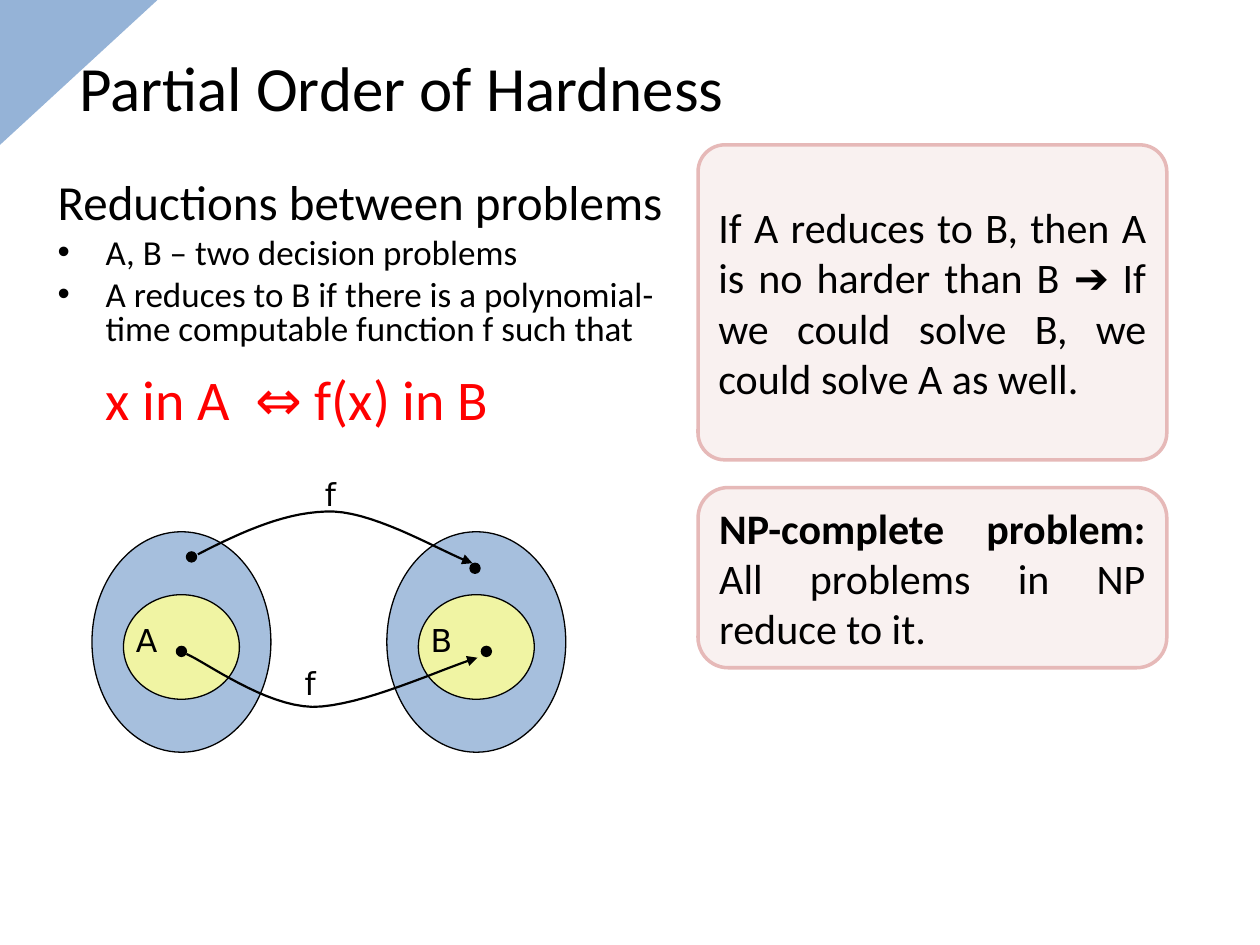
from lxml.etree import SubElement
from pptx import Presentation
from pptx.dml.color import RGBColor
from pptx.enum.shapes import MSO_SHAPE as Shape
from pptx.enum.text import MSO_ANCHOR as Anchor, PP_ALIGN as Align
from pptx.oxml.ns import qn
from pptx.util import Inches, Pt

BLACK = RGBColor(0x00, 0x00, 0x00)
RED = RGBColor(0xFF, 0x00, 0x00)
BLUE = RGBColor(0x4F, 0x81, 0xBD)
YELLOW = RGBColor(0xFF, 0xFF, 0x99)
CORNER_BLUE = RGBColor(0x95, 0xB3, 0xD7)
PALE_PINK = RGBColor(0xF2, 0xDC, 0xDB)
PINK = RGBColor(0xE6, 0xB9, 0xB8)

deck = Presentation()
deck.slide_width, deck.slide_height = Inches(10), Inches(7.5)
page = deck.slides.add_slide(deck.slide_layouts[6])


def add_text(para, text, size=24, font="Calibri", color=BLACK, bold=False):
    span = para.add_run()
    span.text = text
    span.font.size = Pt(size)
    span.font.name = font
    span.font.color.rgb = color
    span.font.bold = bold


def add_figure(kind, left, top, width, height, fill, line=BLACK, weight=0.75, opacity=100):
    """Add a preset shape; line=None leaves it without an outline."""
    shape = page.shapes.add_shape(kind, Inches(left), Inches(top), Inches(width), Inches(height))
    shape.shadow.inherit = False
    shape.fill.solid()
    shape.fill.fore_color.rgb = fill
    if opacity < 100:
        color = shape.fill._xPr.find(qn("a:solidFill"))[0]
        SubElement(color, qn("a:alpha"), val=str(opacity * 1000))
    if line is None:
        shape.line.fill.background()
    else:
        shape.line.color.rgb = line
        shape.line.width = Pt(weight)
    return shape


# Title and corner
corner = add_figure(Shape.ISOSCELES_TRIANGLE, 0, 0, 1.25, 1.15, CORNER_BLUE, line=None)
corner.adjustments[0] = 0
corner._element.spPr.find(qn("a:xfrm")).set("flipV", "1")

title = page.shapes.add_textbox(Inches(0.53), Inches(0.29), Inches(9), Inches(0.79)).text_frame
title.word_wrap = True
title.vertical_anchor = Anchor.MIDDLE
add_text(title.paragraphs[0], "Partial Order of Hardness", size=36)

# Definition of a reduction: text, size, colour, space before, indent, bullet
body = page.shapes.add_textbox(Inches(0.36), Inches(1.4), Inches(5.02), Inches(2.3)).text_frame
body.word_wrap = True
body_lines = [
    ("Reductions between problems", 28, BLACK, 0, 0, False),
    ("A, B – two decision problems", 20, BLACK, 5, 0.38, True),
    ("A reduces to B if there is a polynomial-time computable function f such that",
     20, BLACK, 5, 0.38, True),
    ("x in A \u00a0⇔ f(x) in B", 32, RED, 17, 0.38, False),
]
for index, (text, size, color, space, indent, bullet) in enumerate(body_lines):
    para = body.add_paragraph() if index else body.paragraphs[0]
    para.line_spacing = 0.8
    para.space_before = Pt(space)
    add_text(para, text, size=size, color=color)
    properties = para._p.get_or_add_pPr()
    properties.set("marL", str(Inches(indent)))
    if bullet:
        properties.set("indent", str(-Inches(indent)))
        SubElement(properties, qn("a:buFont"), typeface="Arial")
        SubElement(properties, qn("a:buChar"), char="•")

# Problem instances, with the yes-instances inside
set_lefts = (0.73, 3.07)
for left in set_lefts:
    add_figure(Shape.OVAL, left, 4.22, 1.42, 1.75, BLUE, opacity=50)
    add_figure(Shape.OVAL, left + 0.25, 4.72, 0.92, 0.83, YELLOW, opacity=84)
for left, top in [(1.48, 4.38), (3.73, 4.47), (1.4, 5.13), (3.82, 5.13)]:
    add_figure(Shape.OVAL, left, top, 0.08, 0.08, BLACK)

labels = [("A", 0.98, 4.88), ("B", 3.32, 4.88), ("f", 2.48, 3.72), ("f", 2.32, 5.22)]
for text, left, top in labels:
    box = page.shapes.add_textbox(Inches(left), Inches(top), Inches(0.37), Inches(0.4))
    box.text_frame.word_wrap = False
    add_text(box.text_frame.paragraphs[0], text, size=18, font="DejaVu Sans")

# Mapping arrows: each is two cubic curves joined at the middle point
STEPS = 16
mappings = [
    [(1.57, 4.4), (1.92, 4.22), (2.29, 4.05), (2.65, 4.06), (3.02, 4.08), (3.52, 4.39), (3.75, 4.47)],
    [(1.48, 5.19), (1.64, 5.26), (2.1, 5.6), (2.48, 5.61), (2.87, 5.61), (3.52, 5.3), (3.79, 5.22)],
]
for controls in mappings:
    points = []
    for curve in (controls[:4], controls[3:]):
        for step in range(1, STEPS + 1):
            t = step / STEPS
            weights = ((1 - t) ** 3, 3 * t * (1 - t) ** 2, 3 * t ** 2 * (1 - t), t ** 3)
            points.append([Inches(sum(w * point[axis] for w, point in zip(weights, curve)))
                           for axis in (0, 1)])
    start_x, start_y = controls[0]
    builder = page.shapes.build_freeform(Inches(start_x), Inches(start_y))
    builder.add_line_segments(points, close=False)
    arrow = builder.convert_to_shape()
    arrow.shadow.inherit = False
    arrow.fill.background()
    arrow.line.color.rgb = BLACK
    arrow.line.width = Pt(1.25)
    SubElement(arrow.line._get_or_add_ln(), qn("a:tailEnd"), type="triangle")

# Consequences: top, height, corner rounding, (text, bold) parts
callouts = [
    (1.15, 2.5, 0.085,
     [("If A reduces to B, then A is no harder than B ➔ If we could solve B, "
       "we could solve A as well.", False)]),
    (3.87, 1.43, 0.167,
     [("NP-complete problem: ", True), ("All problems in NP reduce to it.", False)]),
]
for top, height, rounding, parts in callouts:
    card = add_figure(Shape.ROUNDED_RECTANGLE, 5.54, top, 3.72, height, PALE_PINK,
                      line=PINK, weight=2, opacity=40)
    card.adjustments[0] = rounding
    card.text_frame.word_wrap = True
    card.text_frame.vertical_anchor = Anchor.MIDDLE
    para = card.text_frame.paragraphs[0]
    para.alignment = Align.JUSTIFY
    for text, bold in parts:
        add_text(para, text, bold=bold)

deck.save("out.pptx")
